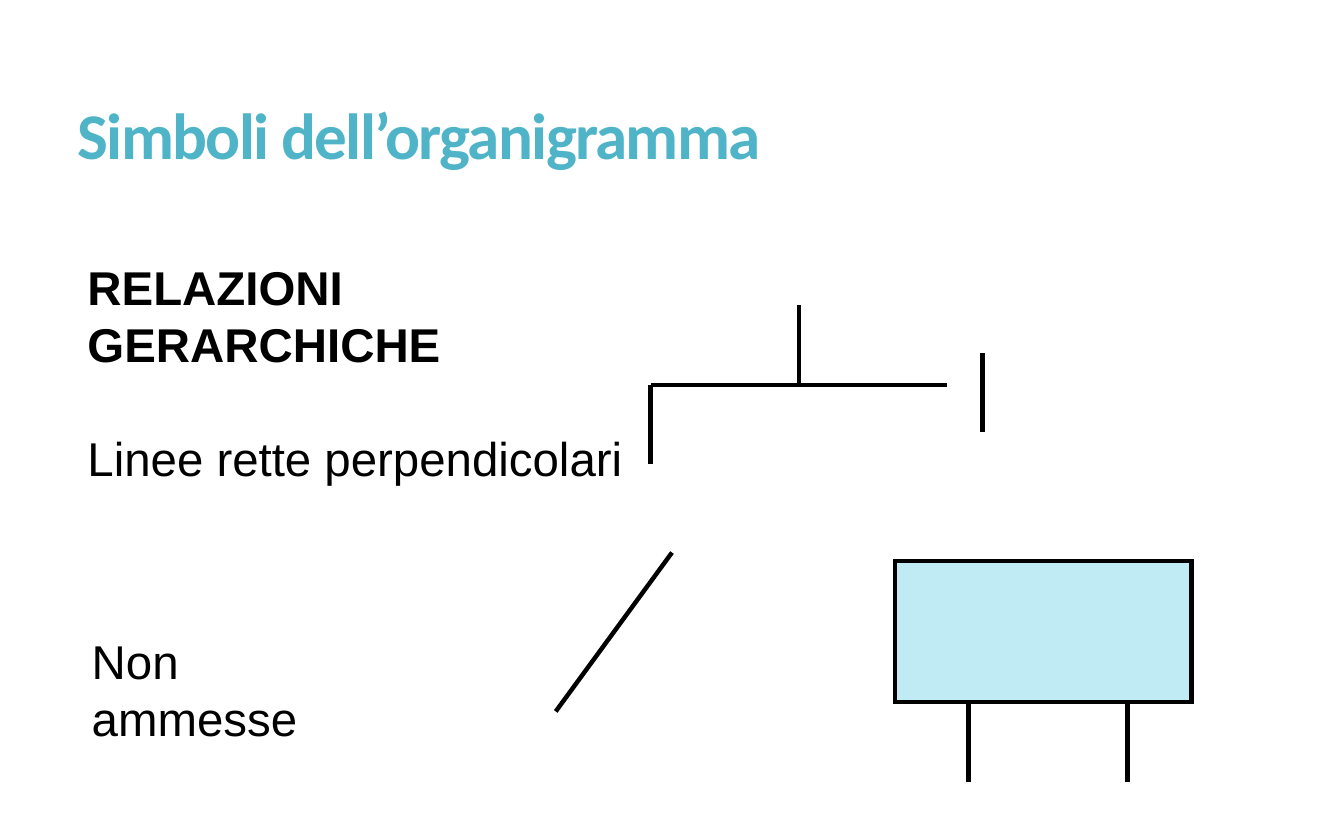
from pptx import Presentation
from pptx.dml.color import RGBColor
from pptx.enum.shapes import MSO_CONNECTOR, MSO_SHAPE
from pptx.enum.text import MSO_ANCHOR
from pptx.oxml.ns import qn
from pptx.util import Inches, Pt
from lxml.etree import SubElement

TEAL = RGBColor(0x50, 0xB4, 0xC8)
BLACK = RGBColor(0, 0, 0)
PALE = RGBColor(0xC0, 0xEB, 0xF4)

BODY = {"name": "Arial", "size": Pt(32), "bold": False}
HEAD = {**BODY, "bold": True}
TITLE = {"name": "Calibri", "size": Pt(44), "bold": True}
TIGHT = {"line_spacing": 0.85}
PLAIN = {}
APART = {"space_before": Pt(38.5)}


def apply(item, values):
    for name, value in values.items():
        setattr(item, name, value)


class Chart:
    """Draw the parts of the slide in one shared style."""

    def __init__(self, slide):
        self.shapes = slide.shapes
        self.color = BLACK
        self.width = Pt(3)

    def stroke(self, line):
        line.color.rgb = self.color
        line.width = self.width

    def text(self, box, lines, color=BLACK, inset=(0.12, 0.06),
             anchor=MSO_ANCHOR.TOP, track=None):
        frame = self.shapes.add_textbox(*map(Inches, box)).text_frame
        side, edge = map(Inches, inset)
        apply(frame, {"word_wrap": True, "vertical_anchor": anchor,
                      "margin_left": side, "margin_right": side,
                      "margin_top": edge, "margin_bottom": edge})
        for index, (words, font, layout) in enumerate(lines):
            para = frame.add_paragraph() if index else frame.paragraphs[0]
            apply(para, layout)
            run = para.add_run()
            run.text = words
            apply(run.font, font)
            run.font.color.rgb = color
            if track:
                run._r.get_or_add_rPr().set("spc", str(track))

    def line(self, *ends):
        link = self.shapes.add_connector(
            MSO_CONNECTOR.STRAIGHT, *map(Inches, ends))
        self.stroke(link.line)
        SubElement(link._element.spPr, qn("a:effectLst"))

    def drop(self, left, top):
        self.line(left, top, left, top + 0.74)

    def block(self, *box):
        shape = self.shapes.add_shape(MSO_SHAPE.RECTANGLE, *map(Inches, box))
        shape.shadow.inherit = False
        shape.fill.solid()
        shape.fill.fore_color.rgb = PALE
        self.stroke(shape.line)
        edge = shape._element.spPr.find(qn("a:ln"))
        SubElement(edge, qn("a:miter")).set("lim", "800000")


def main():
    deck = Presentation()
    deck.slide_width = Inches(12.6)
    deck.slide_height = Inches(12.6 / 1.6)
    chart = Chart(deck.slides.add_slide(deck.slide_layouts[6]))

    chart.text((0.63, 0.52, 11.34, 1.58),
               [("Simboli dell’organigramma", TITLE, TIGHT)],
               TEAL, (0.1, 0.05), MSO_ANCHOR.MIDDLE, -110)
    chart.text((0.7, 2.36, 6.06, 1.72),
               [("RELAZIONI GERARCHICHE", HEAD, PLAIN),
                ("Linee rette perpendicolari", BODY, APART)])
    chart.text((0.74, 5.87, 3, 1.18), [("Non ammesse", BODY, PLAIN)])

    chart.line(6.1, 3.61, 8.88, 3.61)
    chart.line(5.21, 6.67, 6.3, 5.18)
    chart.block(8.39, 5.26, 2.78, 1.32)
    for spot in [(6.1, 3.61), (9.21, 3.31), (7.49, 2.86),
                 (9.08, 6.59), (10.57, 6.59)]:
        chart.drop(*spot)

    deck.save("out.pptx")


if __name__ == "__main__":
    main()
